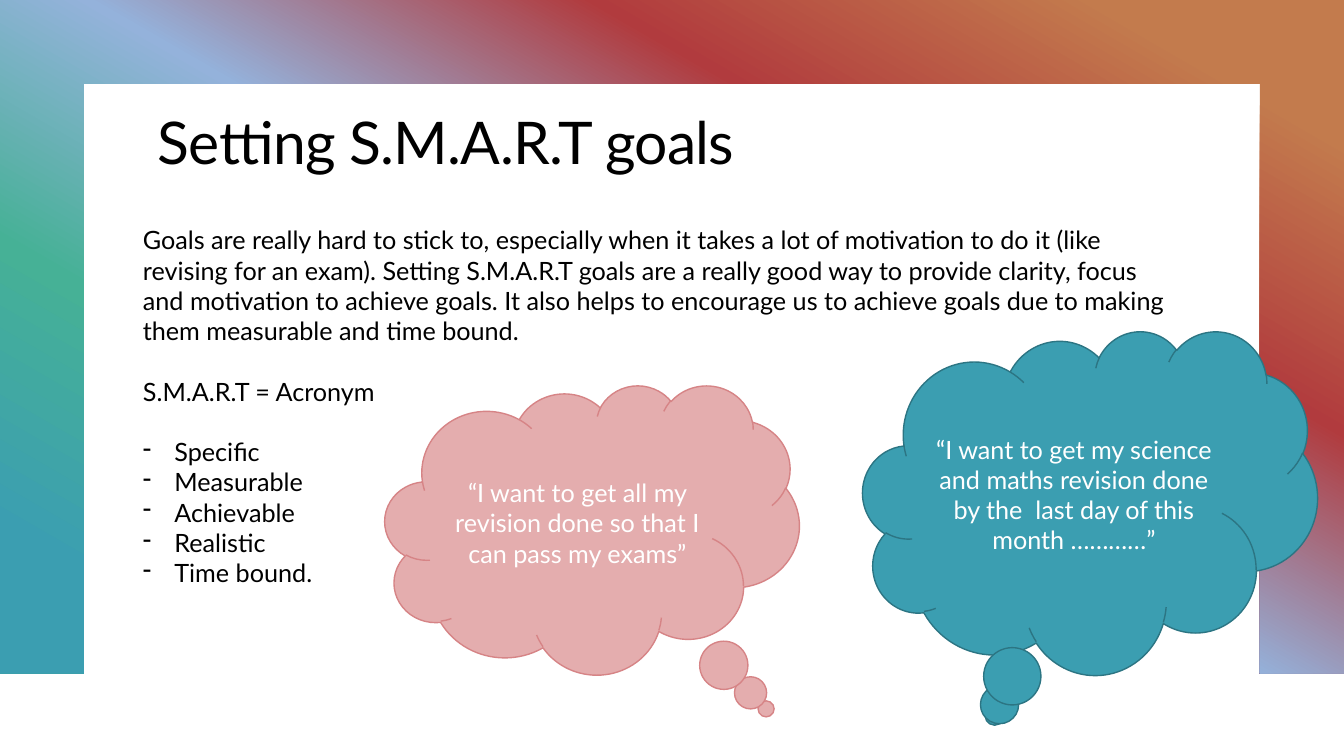
from dataclasses import dataclass

from lxml import etree
from pptx import Presentation
from pptx.dml.color import RGBColor
from pptx.enum.shapes import MSO_SHAPE
from pptx.enum.text import MSO_ANCHOR, MSO_AUTO_SIZE, PP_ALIGN
from pptx.oxml.ns import qn
from pptx.util import Pt

CLOUD = MSO_SHAPE.CLOUD_CALLOUT
MIDDLE = MSO_ANCHOR.MIDDLE
TOP = MSO_ANCHOR.TOP
FIT_SHAPE = MSO_AUTO_SIZE.SHAPE_TO_FIT_TEXT
NO_FIT = MSO_AUTO_SIZE.NONE
CENTER = PP_ALIGN.CENTER
LEFT = PP_ALIGN.LEFT

COLORS = {
    "black": "000000",
    "white": "FFFFFF",
    "teal": "3B9EB1",
    "dark_teal": "2C7583",
    "pink": "E4ADAE",
    "rose": "D68486",
    "orange": "C37B4D",
    "red": "B13B3E",
    "blue": "94B2DB",
    "green": "46B196",
}
FONT = "Lato"
WIDTH, HEIGHT = 960, 540
FRAME_BOTTOM, FRAME_EDGE = 481, 60.5
FRAME_STOPS = ((10, "orange"), (30, "red"), (50, "blue"), (70, "green"), (90, "teal"))
BODY_SIZE = 18
BLANK_LINE = 21.6
BULLET_INDENT = 22.5


@dataclass
class Para:
    text: str
    before: float = 0
    bullet: bool = False


@dataclass
class TextBlock:
    box: tuple[float, float, float, float]
    paras: list[Para]
    size: float = BODY_SIZE
    line_spacing: float = 1.0
    char_spacing: float = 0
    autosize: MSO_AUTO_SIZE = NO_FIT


@dataclass
class Cloud:
    box: tuple[float, float, float, float]
    text: str
    fill: str
    line: str
    tail: tuple[float, float]


TITLE = TextBlock(
    (105.8, 75.6, 720, 105.8),
    [Para("Setting S.M.A.R.T goals")],
    size=42,
    line_spacing=0.95,
    char_spacing=-0.5,
)
GOALS = ("Specific", "Measurable", "Achievable", "Realistic", "Time bound.")
BODY = TextBlock(
    (95, 157, 749.5, 269.3),
    [
        Para(
            "Goals are really hard to stick to, especially when it takes a lot of "
            "motivation to do it (like revising for an exam). Setting S.M.A.R.T goals "
            "are a really good way to provide clarity, focus and motivation to achieve "
            "goals. It also helps to encourage us to achieve goals due to making them "
            "measurable and time bound."
        ),
        Para("S.M.A.R.T = Acronym", BLANK_LINE),
        *(Para(goal, 0 if i else BLANK_LINE, True) for i, goal in enumerate(GOALS)),
    ],
    autosize=FIT_SHAPE,
)
CLOUDS = [
    Cloud(
        (616.3, 236.2, 324.7, 245.5),
        "“I want to get my science and maths revision done by the  last day of this month …………”",
        "teal", "dark_teal", (-0.21, 0.62),
    ),
    Cloud(
        (275, 275, 295.9, 206.6),
        "“I want to get all my revision done so that I can pass my exams”",
        "pink", "rose", (0.42, 0.62),
    ),
]


def rgb(name: str) -> RGBColor:
    return RGBColor.from_string(COLORS[name])


def write(p, text: str, size: float, color: str, spacing: float = 0) -> None:
    r = p.add_run()
    r.text = text
    for key, value in {"name": FONT, "size": Pt(size)}.items():
        setattr(r.font, key, value)
    r.font.color.rgb = rgb(color)
    if spacing:
        r._r.get_or_add_rPr().set("spc", str(round(spacing * 100)))


def add_frame(s) -> None:
    inner_right = WIDTH - FRAME_EDGE
    builder = s.shapes.build_freeform(0, 0, scale=Pt(1))
    builder.add_line_segments([
        (WIDTH, 0), (WIDTH, FRAME_BOTTOM), (inner_right, FRAME_BOTTOM),
        (inner_right, FRAME_EDGE), (FRAME_EDGE, FRAME_EDGE),
        (FRAME_EDGE, FRAME_BOTTOM), (0, FRAME_BOTTOM),
    ])
    sp = builder.convert_to_shape()
    sp.shadow.inherit = False
    sp.line.fill.background()
    sp.fill.gradient()
    sp.fill.gradient_angle = 240
    stops = sp._element.spPr.find(".//" + qn("a:gsLst"))
    for stop in list(stops):
        stops.remove(stop)
    for percent, color in FRAME_STOPS:
        stop = etree.SubElement(stops, qn("a:gs"), pos=str(percent * 1000))
        etree.SubElement(stop, qn("a:srgbClr"), val=COLORS[color])


def add_bullet(p) -> None:
    pPr = p._p.get_or_add_pPr()
    pPr.set("marL", str(Pt(BULLET_INDENT)))
    pPr.set("indent", str(-Pt(BULLET_INDENT)))
    etree.SubElement(pPr, qn("a:buChar"), char="-")


def add_text(s, block: TextBlock) -> None:
    tf = s.shapes.add_textbox(*map(Pt, block.box)).text_frame
    settings = {"word_wrap": True, "auto_size": block.autosize, "vertical_anchor": TOP}
    for key, value in settings.items():
        setattr(tf, key, value)
    for i, para in enumerate(block.paras):
        p = tf.add_paragraph() if i else tf.paragraphs[0]
        formats = {
            "alignment": LEFT,
            "line_spacing": block.line_spacing,
            "space_before": Pt(para.before),
        }
        for key, value in formats.items():
            setattr(p, key, value)
        if para.bullet:
            add_bullet(p)
        write(p, para.text, block.size, "black", block.char_spacing)


def add_cloud(s, cloud: Cloud) -> None:
    sp = s.shapes.add_shape(CLOUD, *map(Pt, cloud.box))
    sp.shadow.inherit = False
    for i, value in enumerate(cloud.tail):
        sp.adjustments[i] = value
    sp.fill.solid()
    sp.fill.fore_color.rgb = rgb(cloud.fill)
    sp.line.color.rgb = rgb(cloud.line)
    sp.line.width = Pt(1)
    tf = sp.text_frame
    for key, value in {"word_wrap": True, "vertical_anchor": MIDDLE}.items():
        setattr(tf, key, value)
    p = tf.paragraphs[0]
    p.alignment = CENTER
    write(p, cloud.text, BODY_SIZE, "white")


def main() -> None:
    prs = Presentation()
    prs.slide_width, prs.slide_height = Pt(WIDTH), Pt(HEIGHT)
    s = prs.slides.add_slide(prs.slide_layouts[6])
    s.background.fill.solid()
    s.background.fill.fore_color.rgb = rgb("white")
    add_frame(s)
    for block in (TITLE, BODY):
        add_text(s, block)
    for cloud in CLOUDS:
        add_cloud(s, cloud)
    prs.save("out.pptx")


if __name__ == "__main__":
    main()
